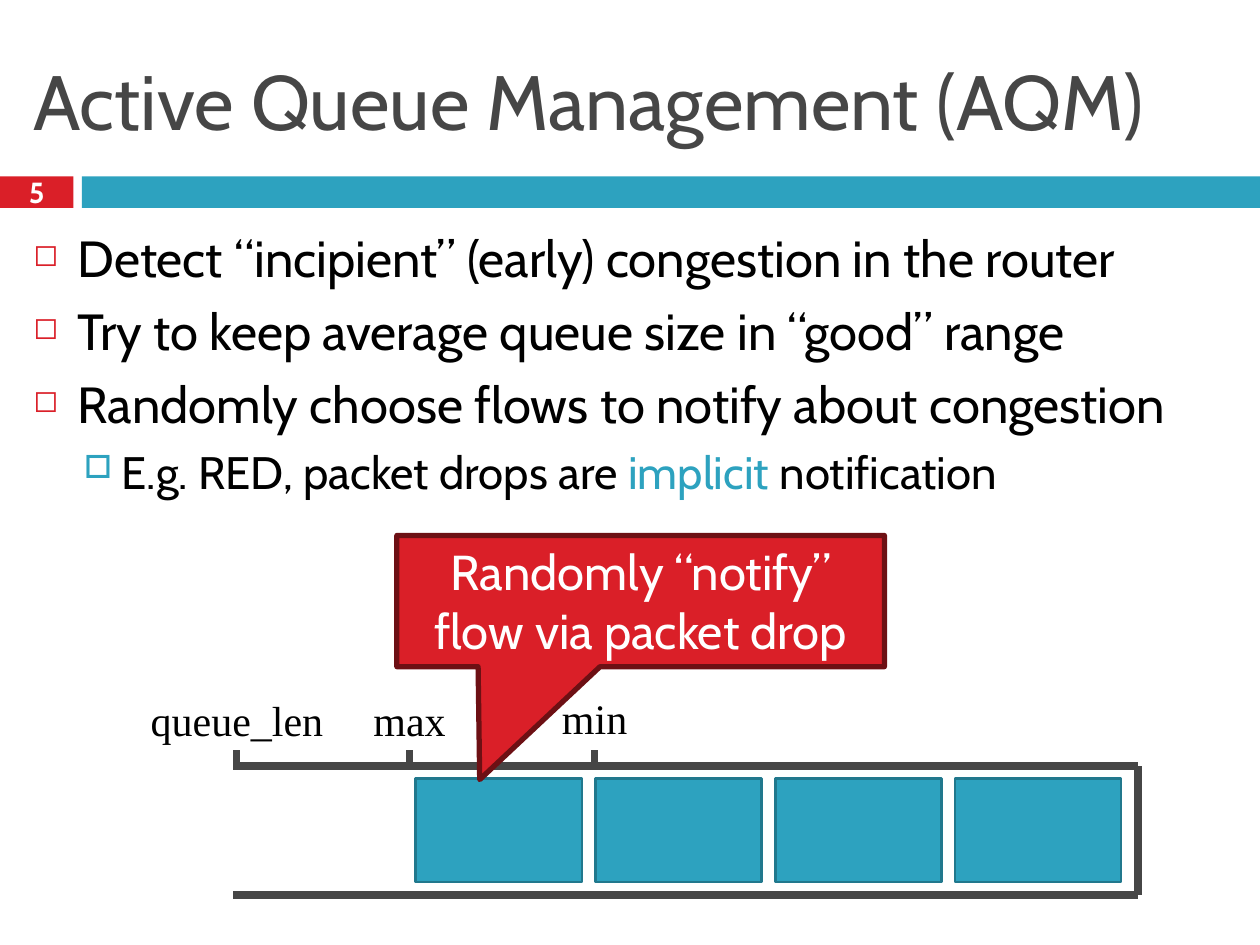
from lxml import etree
from pptx import Presentation
from pptx.dml.color import RGBColor
from pptx.enum.shapes import MSO_CONNECTOR, MSO_SHAPE
from pptx.enum.text import MSO_ANCHOR, PP_ALIGN
from pptx.oxml.ns import qn
from pptx.util import Pt

RECTANGLE = MSO_SHAPE.RECTANGLE
CALLOUT = MSO_SHAPE.RECTANGULAR_CALLOUT
STRAIGHT = MSO_CONNECTOR.STRAIGHT
TOP, MIDDLE = MSO_ANCHOR.TOP, MSO_ANCHOR.MIDDLE
LEFT, CENTER = PP_ALIGN.LEFT, PP_ALIGN.CENTER

SANS, SERIF = "Cabin", "Times New Roman"
RED, DARK_RED = "DA1F28", "6D1014"
BLUE, DARK_BLUE = "2DA2BF", "21788D"
GRAY, BLACK, WHITE = "464646", "000000", "FFFFFF"

QUEUE_LEFT, QUEUE_RIGHT = 133.2, 650.2
QUEUE_TOP, QUEUE_BOTTOM = 437.8, 511.2
TICK_HEIGHT = 9.4


def color(hex_string):
    return RGBColor.from_string(hex_string)


def add_run(paragraph, text, size, font, hex_color, bold=False):
    run = paragraph.add_run()
    run.text = text
    run.font.size = Pt(size)
    run.font.name = font
    run.font.bold = bold
    run.font.color.rgb = color(hex_color)


def add_box(slide, kind, left, top, width, height, fill, line=None, line_width=1.5):
    shape = slide.shapes.add_shape(kind, Pt(left), Pt(top), Pt(width), Pt(height))
    shape.shadow.inherit = False
    shape.fill.solid()
    shape.fill.fore_color.rgb = color(fill)
    if line:
        shape.line.color.rgb = color(line)
        shape.line.width = Pt(line_width)
    else:
        shape.line.fill.background()
    return shape


def add_line(slide, x1, y1, x2, y2, width=4.5):
    line = slide.shapes.add_connector(STRAIGHT, Pt(x1), Pt(y1), Pt(x2), Pt(y2))
    line.line.color.rgb = color(GRAY)
    line.line.width = Pt(width)
    etree.SubElement(line._element.spPr, qn("a:effectLst"))


def add_text_frame(slide, left, top, width, height, anchor=TOP, wrap=True):
    box = slide.shapes.add_textbox(Pt(left), Pt(top), Pt(width), Pt(height))
    frame = box.text_frame
    frame.word_wrap = wrap
    frame.vertical_anchor = anchor
    return frame


def set_bullet(paragraph, character, hex_color, percent, margin, hanging):
    properties = paragraph._p.get_or_add_pPr()
    properties.set("marL", str(Pt(margin)))
    properties.set("indent", str(-Pt(hanging)))
    bullet_color = etree.SubElement(properties, qn("a:buClr"))
    etree.SubElement(bullet_color, qn("a:srgbClr"), val=hex_color)
    etree.SubElement(properties, qn("a:buSzPct"), val=str(percent * 1000))
    etree.SubElement(properties, qn("a:buChar"), char=character)


def add_header(slide):
    number = add_box(slide, RECTANGLE, 0, 100.8, 42, 18, RED)
    add_box(slide, RECTANGLE, 46.8, 100.8, 673.2, 18, BLUE)
    frame = number.text_frame
    frame.margin_top = frame.margin_bottom = 0
    frame.vertical_anchor = MIDDLE
    frame.paragraphs[0].alignment = CENTER
    add_run(frame.paragraphs[0], "5", 16.6, SANS, WHITE, bold=True)

    title = add_text_frame(slide, 12, 18, 696, 78, MIDDLE).paragraphs[0]
    title.alignment = LEFT
    add_run(title, "Active Queue Management (AQM)", 44, SANS, GRAY)


def add_body(slide):
    frame = add_text_frame(slide, 12, 126, 696, 402)
    points = [
        "Detect “incipient” (early) congestion in the router",
        "Try to keep average queue size in “good” range",
        "Randomly choose flows to notify about congestion",
    ]
    for index, text in enumerate(points):
        paragraph = frame.add_paragraph() if index else frame.paragraphs[0]
        paragraph.space_before = Pt(7)
        set_bullet(paragraph, "◻", RED, 60, 25.2, 25.2)
        add_run(paragraph, text, 29, SANS, BLACK)

    example = frame.add_paragraph()
    example.level = 1
    example.space_before = Pt(5.5)
    set_bullet(example, "□", BLUE, 70, 50.4, 21.6)
    add_run(example, "E.g. RED, packet drops are ", 26, SANS, BLACK)
    add_run(example, "implicit", 26, SANS, BLUE)
    add_run(example, " notification", 26, SANS, BLACK)


def add_queue(slide):
    for index in range(4):
        add_box(slide, RECTANGLE, 237.6 + 102.7 * index, 445, 95, 59, BLUE, DARK_BLUE)
    for y in (QUEUE_TOP, QUEUE_BOTTOM):
        add_line(slide, QUEUE_LEFT, y, QUEUE_RIGHT, y)
    add_line(slide, QUEUE_RIGHT, QUEUE_TOP, QUEUE_RIGHT, QUEUE_BOTTOM)


def add_threshold(slide, label, tick_x, left, top, width):
    add_line(slide, tick_x, QUEUE_TOP, tick_x, QUEUE_TOP - TICK_HEIGHT, width=4)
    frame = add_text_frame(slide, left, top, width, 36, MIDDLE, wrap=False)
    frame.paragraphs[0].alignment = CENTER
    add_run(frame.paragraphs[0], label, 24, SERIF, BLACK)


def add_callout(slide):
    callout = add_box(slide, CALLOUT, 226.8, 306, 278.6, 75, RED, DARK_RED, 3)
    callout.adjustments[0] = -0.33
    callout.adjustments[1] = 1.36
    frame = callout.text_frame
    frame.word_wrap = True
    frame.vertical_anchor = TOP
    frame.paragraphs[0].alignment = CENTER
    add_run(frame.paragraphs[0], "Randomly “notify” flow via packet drop", 28, SANS, WHITE)


def main():
    presentation = Presentation()
    presentation.slide_width, presentation.slide_height = Pt(720), Pt(540)
    slide = presentation.slides.add_slide(presentation.slide_layouts[6])
    add_header(slide)
    add_body(slide)
    add_queue(slide)
    add_threshold(slide, "queue_len", 135.4, 78.5, 393.1, 113.8)
    add_threshold(slide, "max", 234, 205.9, 393.1, 56.2)
    add_threshold(slide, "min", 339.8, 313.9, 392.4, 51.8)
    add_callout(slide)
    presentation.save("out.pptx")


if __name__ == "__main__":
    main()
